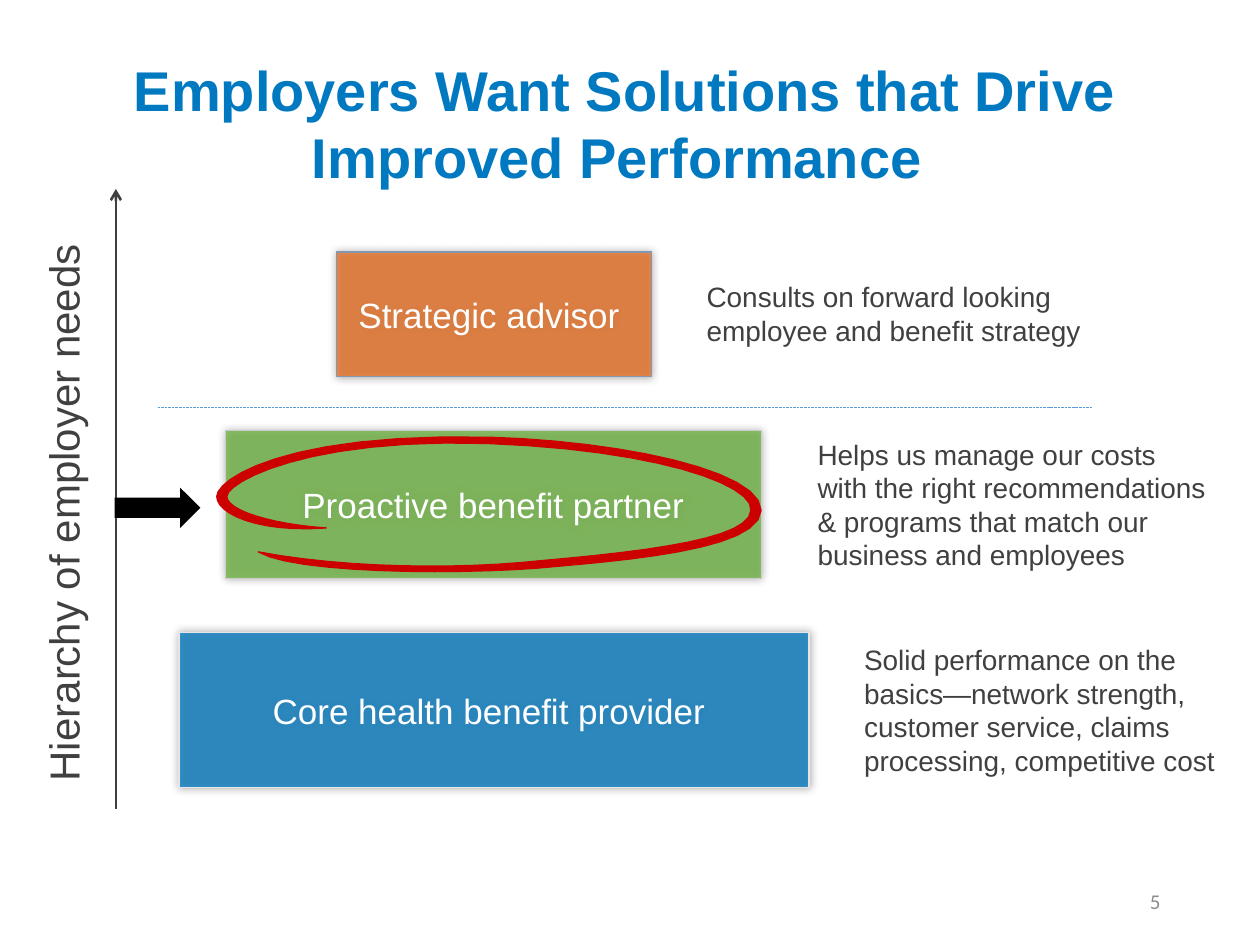
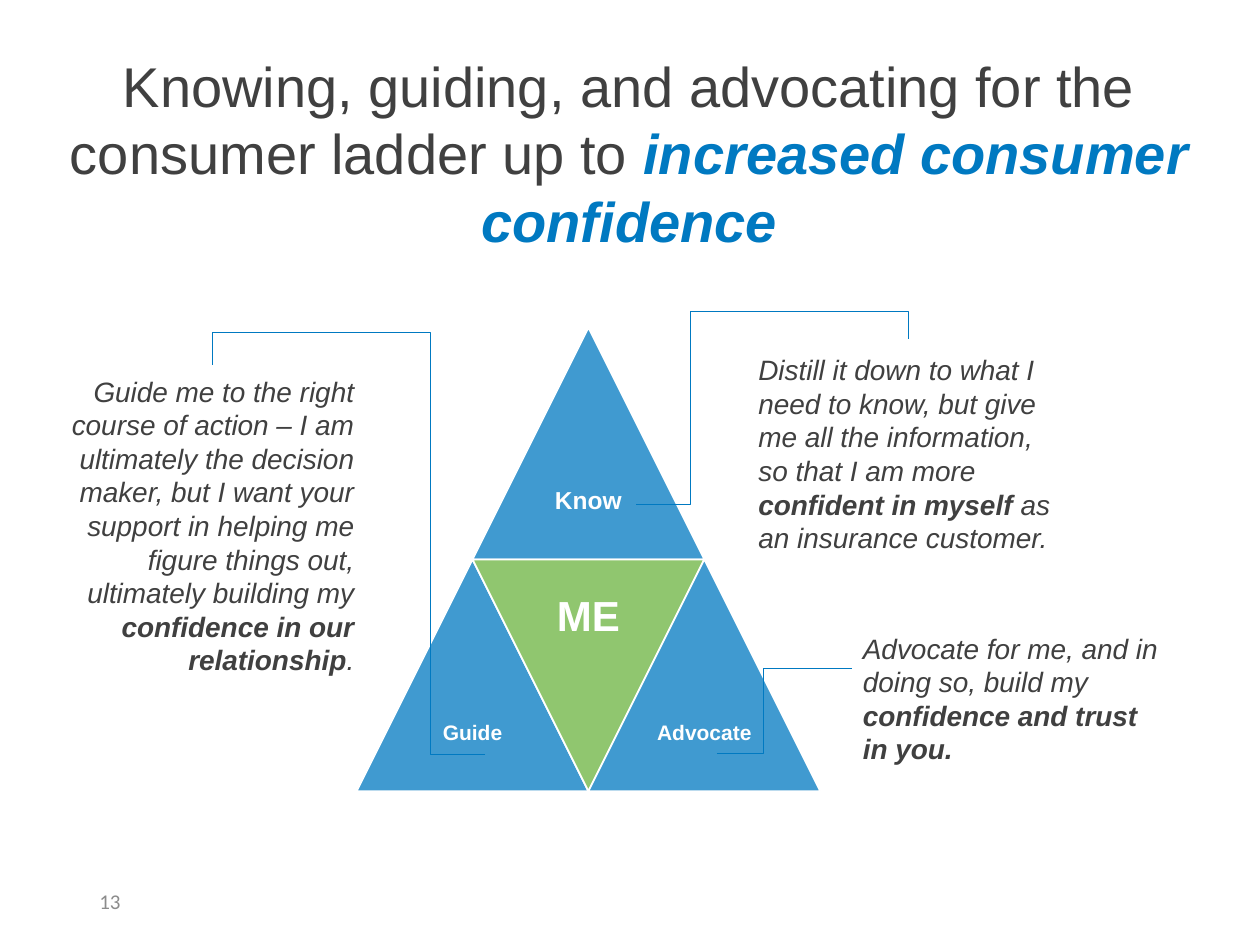
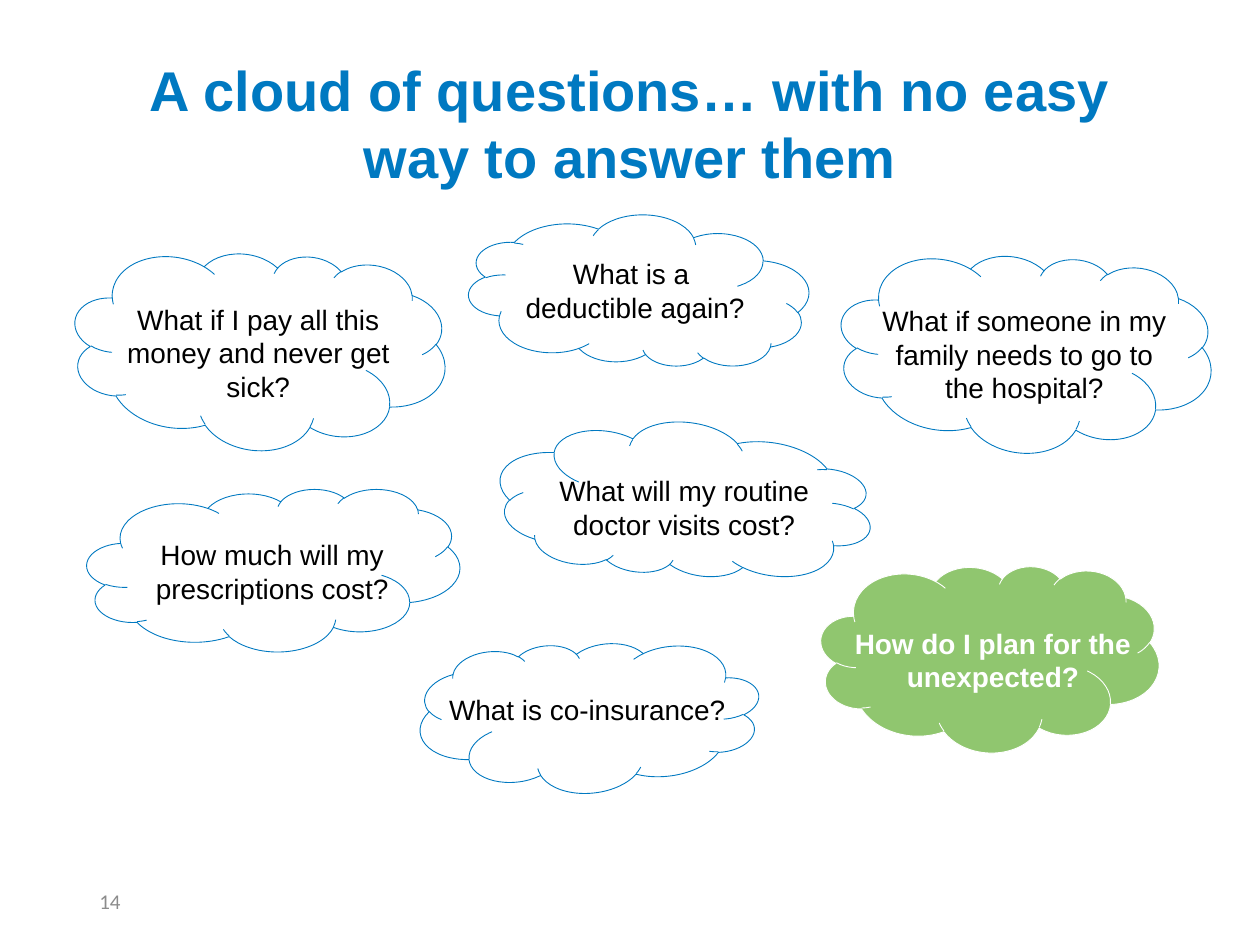
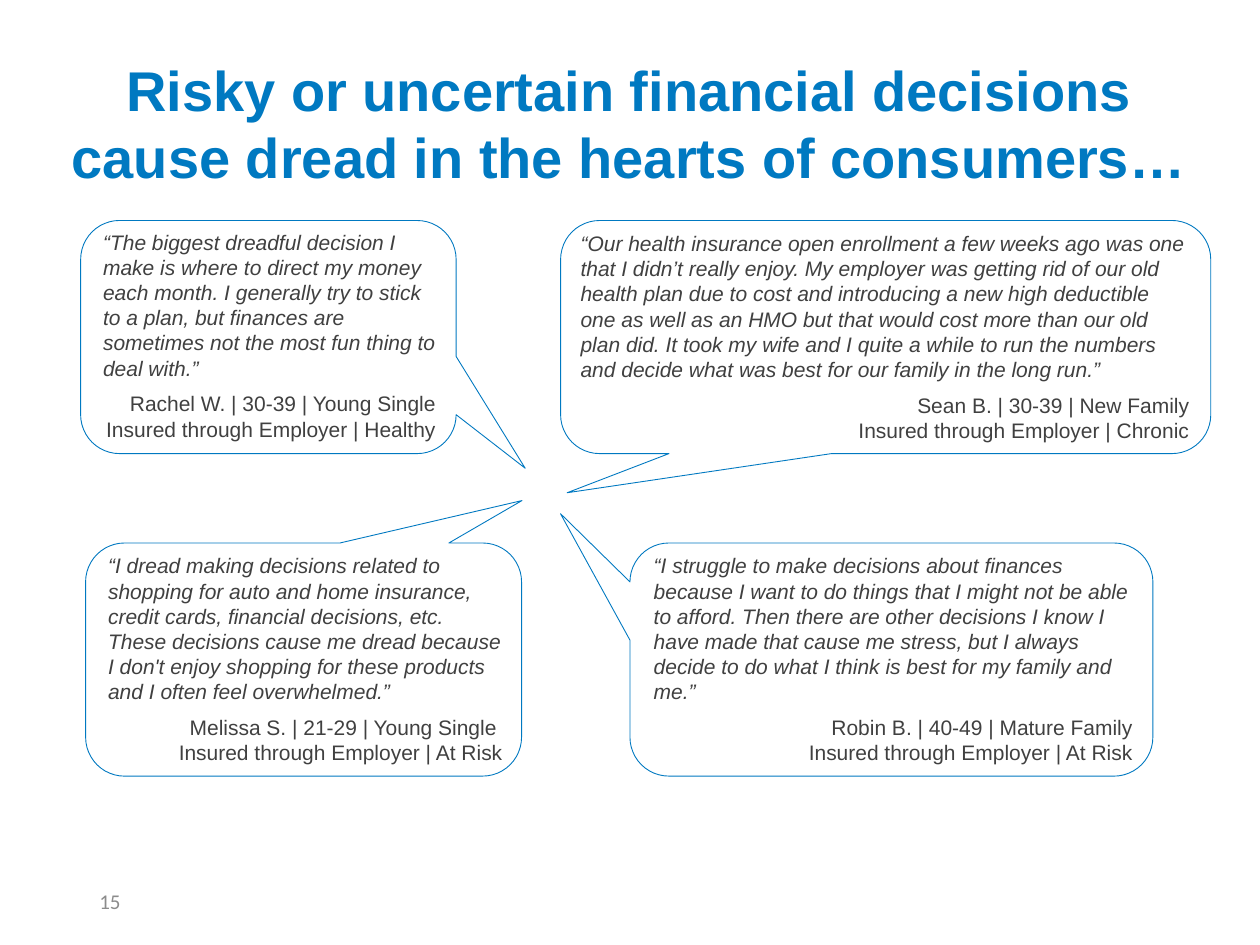
import pptx
import pptx.util
import pptx.dml.color
import pptx.enum.dml
import pptx.enum.shapes
import pptx.enum.text
import pptx.oxml
import pptx.oxml.ns
from pptx.util import Inches, Pt

SHAPE = pptx.enum.shapes.MSO_SHAPE
CONNECTOR = pptx.enum.shapes.MSO_CONNECTOR
ALIGN = pptx.enum.text.PP_ALIGN
ANCHOR = pptx.enum.text.MSO_ANCHOR
FIT = pptx.enum.text.MSO_AUTO_SIZE
qn = pptx.oxml.ns.qn

# ---------- Theme ----------
BLUE, GREEN, ORANGE, RED = "0079C1", "6CB33F", "E86D1F", "CC0000"
INK, GREY, WHITE, BLACK = "404040", "8C8C8C", "FFFFFF", "000000"
TINT = 75  # opacity of coloured shapes, percent


def style(size, color, name="Arial", **extra):
    return {"size": Pt(size), "name": name, "color": color, **extra}


THEME = {
    "title": style(32, BLUE, bold=True),
    "title_plain": style(32, INK),
    "axis": style(24, INK),
    "level": style(20, WHITE),
    "note": style(16, INK),
    "voice": style(16, INK, italic=True),
    "know": style(14, WHITE, bold=True),
    "role": style(12, WHITE, bold=True),
    "me": style(24, WHITE, bold=True),
    "question": style(16, BLACK),
    "key_question": style(16, WHITE, bold=True),
    "quote": style(12, INK, italic=True),
    "speaker": style(12, INK),
    "number": style(12, GREY, name="Calibri"),
}
BOLD = {"bold": True}

# ---------- Content ----------
TITLES = {
    "needs": ((0.65, 0.4, 8.62, 1.15), "title",
              "Employers Want Solutions that Drive Improved Performance "),
    "confidence": ((0.12, 0.4, 9.75, 1.62), "title_plain",
                   [("Knowing, guiding, and advocating for the consumer ladder up to ", {}),
                    ("increased consumer confidence",
                     {"bold": True, "italic": True, "color": BLUE})]),
    "questions": ((0.69, 0.4, 8.62, 1.15), "title",
                  "A cloud of questions… with no easy way to answer them"),
    "dread": ((0.34, 0.4, 9.31, 1.15), "title",
              "Risky or uncertain financial decisions cause dread in the hearts of consumers…"),
}

# label, box, fill, outline, outline width, description box, description
LEVELS = [
    ("Core health benefit provider ", (1.42, 5.02, 5, 1.23), BLUE, "E7E6E6", 1,
     (6.76, 5.05, 3.14, 1.18),
     ["Solid performance on the basics—network strength, customer service, claims "
      "processing, competitive cost"]),
    ("Proactive benefit partner", (1.79, 3.42, 4.25, 1.17), GREEN, "CCCCCC", 0.5,
     (6.39, 3.42, 3.42, 1.18),
     ["Helps us manage our costs",
      "with the right recommendations & programs that match our business and employees"]),
    ("Strategic advisor ", (2.67, 2, 2.5, 0.99), ORANGE, "8497B0", 0.75,
     (5.51, 2.17, 3.54, 0.64),
     ["Consults on forward looking employee and benefit strategy"]),
]
# Hand-drawn ring: start point, then cubic curves (two controls and an end)
RING_START = (2.05, 4.38)
RING_CURVES = [
    ((2.74, 4.51), (3.64, 4.52), (4.29, 4.45)),
    ((5.2, 4.37), (5.95, 4.27), (5.96, 4.05)),
    ((5.98, 3.84), (5.19, 3.57), (3.88, 3.52)),
    ((2.43, 3.47), (1.8, 3.83), (1.8, 3.94)),
    ((1.8, 4.05), (2.15, 4.16), (2.59, 4.19)),
    ((2.03, 4.23), (1.72, 4.07), (1.72, 3.94)),
    ((1.72, 3.81), (2.24, 3.43), (3.89, 3.47)),
    ((4.91, 3.5), (6.04, 3.73), (6.04, 4.05)),
    ((6.03, 4.37), (4.92, 4.45), (4.25, 4.51)),
    ((3.59, 4.56), (2.33, 4.55), (2.05, 4.38)),
]

# label, column and row in half-triangle steps, fill, points down, type style, inset
TRIANGLES = [
    ("Know", 1, 0, BLUE, False, "know", 0.06),
    ("Guide", 0, 2, BLUE, False, "role", 0.05),
    ("ME", 1, 2, GREEN, True, "me", 0.1),
    ("Advocate", 2, 2, BLUE, False, "role", 0.05),
]
VOICES = [
    ((5.92, 2.75, 2.58, 1.72), ALIGN.LEFT,
     [("Distill it down to what I need to know, but give me all the information, "
       "so that I am more ", {}),
      ("confident in myself ", BOLD), ("as an insurance customer.", {})]),
    ((0.33, 2.92, 2.58, 2.52), ALIGN.RIGHT,
     [("Guide me to the right course of action – I am ultimately the decision maker, "
       "but I want your support in helping me figure things out, ultimately building my ", {}),
      ("confidence in our relationship", BOLD), (".", {})]),
    ((6.75, 4.96, 2.58, 1.18), ALIGN.LEFT,
     [("Advocate for me, and in doing so, build my ", {}),
      ("confidence and trust in you.", BOLD)]),
]
# from, to, bend positions as a share of width and height
LEADERS = [
    ((5.69, 5.98), (6.76, 5.31), [0.343]),
    ((5.05, 4), (7.21, 2.69), [0.2, 1.167]),
    ((3.85, 5.99), (1.69, 2.9), [0.2, 1.084]),
]

# cloud box, rotation, flip, text left and top, lines, paragraphs
QUESTIONS = [
    ((0.58, 1.99, 2.96, 1.58), 7.4, "", (0.81, 2.35), 3,
     ["What if I pay all this money and never get sick?"]),
    ((3.72, 1.71, 2.7, 1.2), 0, "V", (3.8, 1.99), 2,
     ["What is a ", "deductible again?"]),
    ((0.69, 3.88, 2.96, 1.29), 0, "", (0.92, 4.22), 2,
     ["How much will my prescriptions cost?"]),
    ((3.33, 5.09, 2.7, 1.2), 354.1, "H", (3.42, 5.45), 1,
     ["What is co-insurance?"]),
    ((3.96, 3.36, 2.96, 1.23), 7.4, "HV", (4.19, 3.71), 2,
     ["What will my routine doctor visits cost?"]),
    ((6.66, 2.01, 2.96, 1.58), 7.6, "", (6.89, 2.36), 3,
     ["What if someone in my family needs to go to the hospital?"]),
]
KEY_QUESTION = ((6.51, 4.47, 2.69, 1.5), 4.3, "", (6.64, 4.92), 2,
                ["How do I plan for the unexpected?"])

# callout box, flip, pointer tip, text left, top and width, quote, speaker lines
QUOTES = [
    ((0.64, 1.75, 2.98, 1.85), "", (0.684, 0.563), (0.72, 1.77, 2.84),
     "“The biggest dreadful decision I make is where to direct my money each month. "
     "I generally try to stick to a plan, but finances are sometimes not the most fun "
     "thing to deal with.”",
     ["Rachel W. | 30-39 | Young Single Insured through Employer | Healthy"]),
    ((0.68, 4.31, 3.46, 1.85), "V", (0.501, 0.682), (0.76, 4.34, 3.33),
     "“I dread making decisions related to shopping for auto and home insurance, credit "
     "cards, financial decisions, etc. These decisions cause me dread because I don't "
     "enjoy shopping for these products and I often feel overwhelmed.”",
     ["Melissa S. | 21-29 | Young Single ", "Insured through Employer | At Risk"]),
    ((5, 4.31, 4.15, 1.85), "HV", (0.633, 0.626), (5.09, 4.34, 4),
     "“I struggle to make decisions about finances because I want to do things that I "
     "might not be able to afford. Then there are other decisions I know I have made that "
     "cause me stress, but I always decide to do what I think is best for my family and me.”",
     ["Robin B. | 40-49 | Mature Family", "Insured through Employer | At Risk"]),
    ((4.45, 1.75, 5.16, 1.85), "H", (0.49, 0.668), (4.51, 1.78, 5.03),
     "“Our health insurance open enrollment a few weeks ago was one that I didn’t really "
     "enjoy. My employer was getting rid of our old health plan due to cost and introducing "
     "a new high deductible one as well as an HMO but that would cost more than our old plan "
     "did. It took my wife and I quite a while to run the numbers and decide what was best "
     "for our family in the long run.”",
     ["Sean B. | 30-39 | New Family", "Insured through Employer | Chronic"]),
]


# ---------- Helpers ----------
def rgb(color):
    return pptx.dml.color.RGBColor.from_string(color)


def inches(values):
    return [Inches(value) for value in values]


def set_all(target, values):
    for key, value in values.items():
        setattr(target, key, value)


def add_xml(parent, tag, **attributes):
    child = parent.makeelement(qn(tag), attributes)
    parent.append(child)
    return child


def write(frame, paragraphs, look, align=ALIGN.LEFT):
    """Each paragraph is a string or a list of (text, style changes)."""
    for index, content in enumerate(paragraphs):
        paragraph = frame.paragraphs[0] if index == 0 else frame.add_paragraph()
        paragraph.alignment = align
        for text, changes in [(content, {})] if isinstance(content, str) else content:
            run = paragraph.add_run()
            run.text = text
            values = {**THEME[look], **changes}
            run.font.color.rgb = rgb(values.pop("color"))
            set_all(run.font, values)


def add_text(slide, box, paragraphs, look, align=ALIGN.LEFT, **frame_format):
    label = slide.shapes.add_textbox(*inches(box))
    set_all(label.text_frame, {"word_wrap": True, "auto_size": FIT.SHAPE_TO_FIT_TEXT,
                               **frame_format})
    write(label.text_frame, paragraphs, look, align)
    return label


def paint(shape, fill, line=None, width=0.5, opacity=100):
    shape.shadow.inherit = False
    shape.fill.solid()
    shape.fill.fore_color.rgb = rgb(fill)
    if opacity < 100:
        color = shape._element.spPr.find(qn("a:solidFill"))[0]
        add_xml(color, "a:alpha", val=str(opacity * 1000))
    if line:
        shape.line.color.rgb = rgb(line)
        shape.line.width = Pt(width)
    else:
        shape.line.fill.background()


def add_preset(slide, preset, box, rotation=0, flip="", **look):
    shape = slide.shapes.add_shape(preset, *inches(box))
    shape.rotation = rotation
    for axis in flip:
        shape._element.spPr.find(qn("a:xfrm")).set("flip" + axis, "1")
    paint(shape, **look)
    return shape


def add_glow(shape):
    effects = shape._element.spPr.find(qn("a:effectLst"))
    shadow = add_xml(effects, "a:outerShdw", blurRad=str(Pt(5)), dist="0", dir="0",
                     algn="ctr", rotWithShape="0")
    add_xml(add_xml(shadow, "a:srgbClr", val=BLACK), "a:alpha", val="40000")


def add_line(slide, start, end, color, width, kind=CONNECTOR.STRAIGHT):
    line = slide.shapes.add_connector(kind, *inches(start + end))
    line.line.color.rgb = rgb(color)
    line.line.width = Pt(width)
    add_xml(line._element.spPr, "a:effectLst")
    return line


def add_leader(slide, start, end, bends):
    leader = add_line(slide, start, end, BLUE, 0.5, CONNECTOR.ELBOW)
    geometry = leader._element.spPr.find(qn("a:prstGeom"))
    geometry.set("prst", f"bentConnector{len(bends) + 2}")
    guides = geometry.find(qn("a:avLst"))
    if guides is None:
        guides = add_xml(geometry, "a:avLst")
    for index, bend in enumerate(bends, 1):
        add_xml(guides, "a:gd", name=f"adj{index}", fmla=f"val {round(bend * 100000)}")


def curve_points(start, curves, steps=12):
    for first, second, end in curves:
        for step in range(1, steps + 1):
            t = step / steps
            weights = ((1 - t) ** 3, 3 * t * (1 - t) ** 2, 3 * t * t * (1 - t), t ** 3)
            yield tuple(Inches(sum(w * point[axis] for w, point in
                                   zip(weights, (start, first, second, end))))
                        for axis in (0, 1))
        start = end


def new_slide(deck, key, number, number_left=0.69, number_align=ALIGN.LEFT):
    slide = deck.slides.add_slide(deck.slide_layouts[5])
    box, look, text = TITLES[key]
    title = slide.shapes.title
    set_all(title, dict(zip(("left", "top", "width", "height"), inches(box))))
    set_all(title.text_frame, {"word_wrap": True, "auto_size": FIT.NONE,
                               "vertical_anchor": ANCHOR.MIDDLE})
    write(title.text_frame, [text], look, ALIGN.CENTER)
    add_text(slide, (number_left, 6.95, 2.25, 0.4), [str(number)], "number", number_align,
             vertical_anchor=ANCHOR.MIDDLE, auto_size=FIT.NONE)
    return slide


# ---------- Slides ----------
def build_needs(deck):
    slide = new_slide(deck, "needs", 5, 7.06, ALIGN.RIGHT)
    axis = add_line(slide, (0.92, 6.42), (0.92, 1.5), INK, 1.5)
    add_xml(axis.line._get_or_add_ln(), "a:tailEnd", type="arrow")
    axis_label = add_text(slide, (-1.75, 3.82, 4.5, 0.5), ["Hierarchy of employer needs"],
                          "axis", ALIGN.CENTER, word_wrap=False)
    axis_label.rotation = 270
    divider = add_line(slide, (1.25, 3.23), (8.67, 3.23), "5B9BD5", 0.5)
    divider.line.dash_style = pptx.enum.dml.MSO_LINE.SQUARE_DOT

    for name, box, fill, line, width, note_box, note in LEVELS:
        level = add_preset(slide, SHAPE.RECTANGLE, box, fill=fill, line=line,
                           width=width, opacity=TINT)
        add_glow(level)
        level.text_frame.vertical_anchor = ANCHOR.MIDDLE
        write(level.text_frame, [name], "level", ALIGN.CENTER)
        add_text(slide, note_box, note, "note")

    add_preset(slide, SHAPE.RIGHT_ARROW, (0.91, 3.87, 0.68, 0.32), fill=BLACK)
    outline = slide.shapes.build_freeform(*inches(RING_START))
    outline.add_line_segments(list(curve_points(RING_START, RING_CURVES)), close=True)
    paint(outline.convert_to_shape(), RED, RED, 0.75)


def build_confidence(deck):
    slide = new_slide(deck, "confidence", 13)
    left, top, side = 2.83, 2.6, 1.84
    half = side / 2
    for name, column, row, fill, down, look, inset in TRIANGLES:
        x, y = left + column * half, top + row * half
        add_preset(slide, SHAPE.ISOSCELES_TRIANGLE, (x, y, side, side),
                   rotation=180 if down else 0, fill=fill, line=WHITE, width=1, opacity=TINT)
        margins = {f"margin_{edge}": Inches(inset)
                   for edge in ("left", "right", "top", "bottom")}
        label = add_text(slide, (x + half / 2, y if down else y + half, half, half), [name],
                         look, ALIGN.CENTER, vertical_anchor=ANCHOR.MIDDLE,
                         auto_size=FIT.NONE, **margins)
        label.text_frame.paragraphs[0].line_spacing = 0.9
    for box, align, voice in VOICES:
        add_text(slide, box, [voice], "voice", align)
    for leader in LEADERS:
        add_leader(slide, *leader)


def build_questions(deck):
    slide = new_slide(deck, "questions", 14)
    plain = {"fill": WHITE, "line": BLUE}
    key = {"fill": GREEN, "line": WHITE, "opacity": TINT}
    clouds = [(cloud, plain, "question") for cloud in QUESTIONS]
    clouds.append((KEY_QUESTION, key, "key_question"))
    for (box, rotation, flip, corner, lines, text), colors, look in clouds:
        add_preset(slide, SHAPE.CLOUD, box, rotation, flip, **colors)
        add_text(slide, (*corner, 2.48, 0.1 + 0.27 * lines), text, look, ALIGN.CENTER)


def build_dread(deck):
    slide = new_slide(deck, "dread", 15)
    for box, flip, tip, (left, top, width), quote, speaker in QUOTES:
        callout = add_preset(slide, SHAPE.ROUNDED_RECTANGULAR_CALLOUT, box, flip=flip,
                             fill=WHITE, line=BLUE)
        for index, value in enumerate((*tip, 0.167)):
            callout.adjustments[index] = value
        words = add_text(slide, (left, top, width, 1.8), [quote], "quote").text_frame
        words.paragraphs[0].space_after = Pt(6)
        for line in speaker:
            paragraph = words.add_paragraph()
            paragraph.alignment = ALIGN.RIGHT
            run = paragraph.add_run()
            run.text = line
            values = dict(THEME["speaker"])
            run.font.color.rgb = rgb(values.pop("color"))
            set_all(run.font, values)


def main():
    deck = pptx.Presentation()
    deck.slide_width, deck.slide_height = Inches(10), Inches(7.5)
    for build in (build_needs, build_confidence, build_questions, build_dread):
        build(deck)
    deck.save("out.pptx")


if __name__ == "__main__":
    main()
